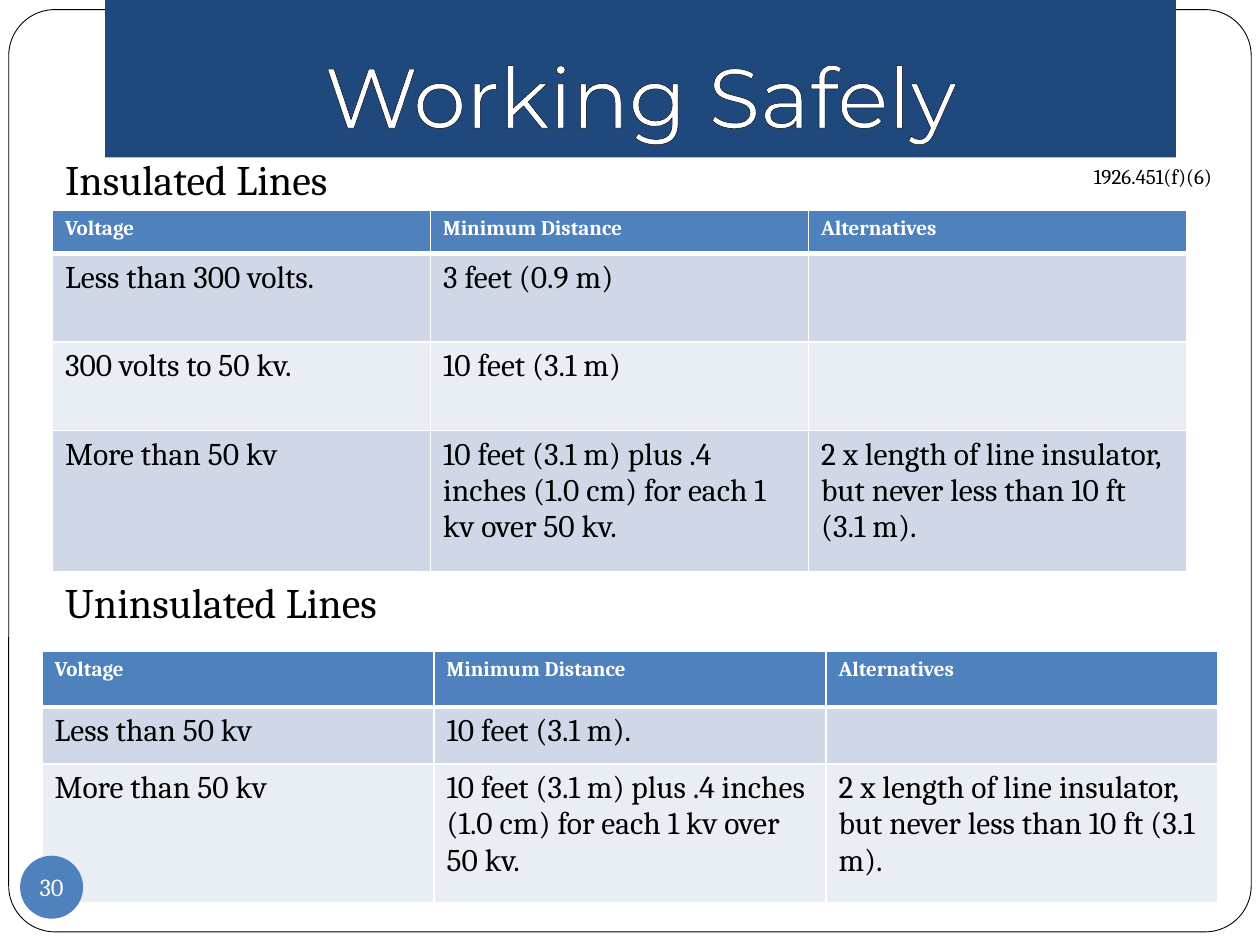
from lxml.etree import SubElement
from pptx import Presentation
from pptx.dml.color import RGBColor
from pptx.enum.shapes import MSO_SHAPE
from pptx.enum.text import MSO_ANCHOR, MSO_AUTO_SIZE, PP_ALIGN
from pptx.oxml import parse_xml
from pptx.oxml.ns import nsdecls, qn
from pptx.util import Pt

BLUE, NAVY, WHITE, BLACK = "4F81BD", "1F497D", "FFFFFF", "000000"
BANDS = ["D0D8E8", "E9EDF4"]
HEADS = ["Voltage", "Minimum Distance", "Alternatives"]
PLUS = "10 feet (3.1 m) plus .4 inches (1.0 cm) for each 1 kv over 50 kv."
TWICE = "2 x length of line insulator, but never less than 10 ft (3.1 m)."


def paint(obj, hue):
    obj.solid()
    obj.fore_color.rgb = RGBColor.from_string(hue)


def place(shape, box):
    shape.left, shape.top, shape.width, shape.height = map(Pt, box)


def write(para, text, size, hue, font="Cambria", bold=False):
    run = para.add_run()
    run.text = text
    run.font.name, run.font.size, run.font.bold = font, Pt(size), bold
    paint(run.font.fill, hue)
    return run


def stroke(tag, width, hue):
    return parse_xml(
        f'<a:{tag} {nsdecls("a")} w="{Pt(width)}"><a:solidFill>'
        f'<a:srgbClr val="{hue}"/></a:solidFill></a:{tag}>')


def add_frame(slide, box):
    frame = slide.shapes.add_shape(MSO_SHAPE.ROUNDED_RECTANGLE, *map(Pt, box))
    frame.adjustments[0] = 0.05
    frame.shadow.inherit = False
    paint(frame.fill, WHITE)
    paint(frame.line.fill, BLACK)
    frame.line.width = Pt(0.5)
    slide.shapes._spTree.insert(2, frame._element)


def set_title(slide, box, text):
    title = slide.shapes.title
    place(title, box)
    paint(title.fill, NAVY)
    frame = title.text_frame
    frame.auto_size = MSO_AUTO_SIZE.NONE
    frame.vertical_anchor = MSO_ANCHOR.BOTTOM
    frame.margin_bottom = Pt(7.2)
    para = frame.paragraphs[0]
    para.alignment = PP_ALIGN.CENTER
    run = write(para, text, 48, WHITE, "Montserrat")
    run.font._element.insert(0, stroke("ln", 0.75, BLACK))


def set_body(slide, box, items):
    body = slide.placeholders[1]
    place(body, box)
    frame = body.text_frame
    frame.auto_size = MSO_AUTO_SIZE.NONE
    for i, (text, gap) in enumerate(items):
        para = frame.add_paragraph() if i else frame.paragraphs[0]
        para.space_before = Pt(gap)
        props = para._p.get_or_add_pPr()
        props.set("marL", "0")
        props.set("indent", "0")
        SubElement(props, qn("a:buNone"))
        write(para, text, 24, BLACK)


def add_grid(slide, box, highs, rows):
    rows = [HEADS] + rows
    table = slide.shapes.add_table(len(rows), len(HEADS), *map(Pt, box)).table
    for col in table.columns:
        col.width = Pt(box[2] / len(HEADS))
    for r, (high, texts) in enumerate(zip(highs, rows)):
        table.rows[r].height = Pt(high)
        edges = {"lnL": 1, "lnR": 1, "lnT": 3 if r == 1 else 1,
                 "lnB": 1 if r else 3}
        for c, text in enumerate(texts):
            cell = table.cell(r, c)
            paint(cell.fill, BANDS[(r - 1) % 2] if r else BLUE)
            props = cell._tc.get_or_add_tcPr()
            for i, (tag, width) in enumerate(edges.items()):
                props.insert(i, stroke(tag, width, WHITE))
            para = cell.text_frame.paragraphs[0]
            if text:
                write(para, text, 18 if r else 12, BLACK if r else WHITE,
                      bold=not r)
            else:
                para.font.size = Pt(18)


def add_badge(slide, box, text):
    badge = slide.shapes.add_shape(MSO_SHAPE.OVAL, *map(Pt, box))
    badge.shadow.inherit = False
    paint(badge.fill, BLUE)
    badge.line.fill.background()
    frame = badge.text_frame
    frame.word_wrap = False
    frame.vertical_anchor = MSO_ANCHOR.MIDDLE
    frame.margin_left = frame.margin_right = 0
    frame.margin_top = frame.margin_bottom = 0
    para = frame.paragraphs[0]
    para.alignment = PP_ALIGN.CENTER
    write(para, text, 14, WHITE)


def add_note(slide, box, text):
    frame = slide.shapes.add_textbox(*map(Pt, box)).text_frame
    frame.word_wrap = True
    write(frame.paragraphs[0], text, 12, BLACK)


def main():
    deck = Presentation()
    deck.slide_width, deck.slide_height = Pt(720), Pt(540)
    slide = deck.slides.add_slide(deck.slide_layouts[1])
    add_frame(slide, (5, 5.5, 710, 527))
    set_body(slide, (30, 84, 654, 390),
             [("Insulated Lines", 0), ("Uninsulated Lines", 213)])
    add_grid(slide, (24, 372, 672, 144), [32, 32.5, 79.5], [
        ["Less than 50 kv", "10 feet (3.1 m).", ""],
        ["More than 50 kv", PLUS, TWICE]])
    set_title(slide, (60, 0, 612, 90), "Working Safely")
    add_grid(slide, (30, 120, 648, 207), [25, 50.5, 50.5, 81], [
        ["Less than 300 volts.", "3 feet (0.9 m)", ""],
        ["300 volts to 50 kv.", "10 feet (3.1 m)", ""],
        ["More than 50 kv", PLUS, TWICE]])
    add_badge(slide, (11.5, 489, 36, 36), "30")
    add_note(slide, (618, 90, 156, 22), "1926.451(f)(6)")
    deck.save("out.pptx")


if __name__ == "__main__":
    main()
